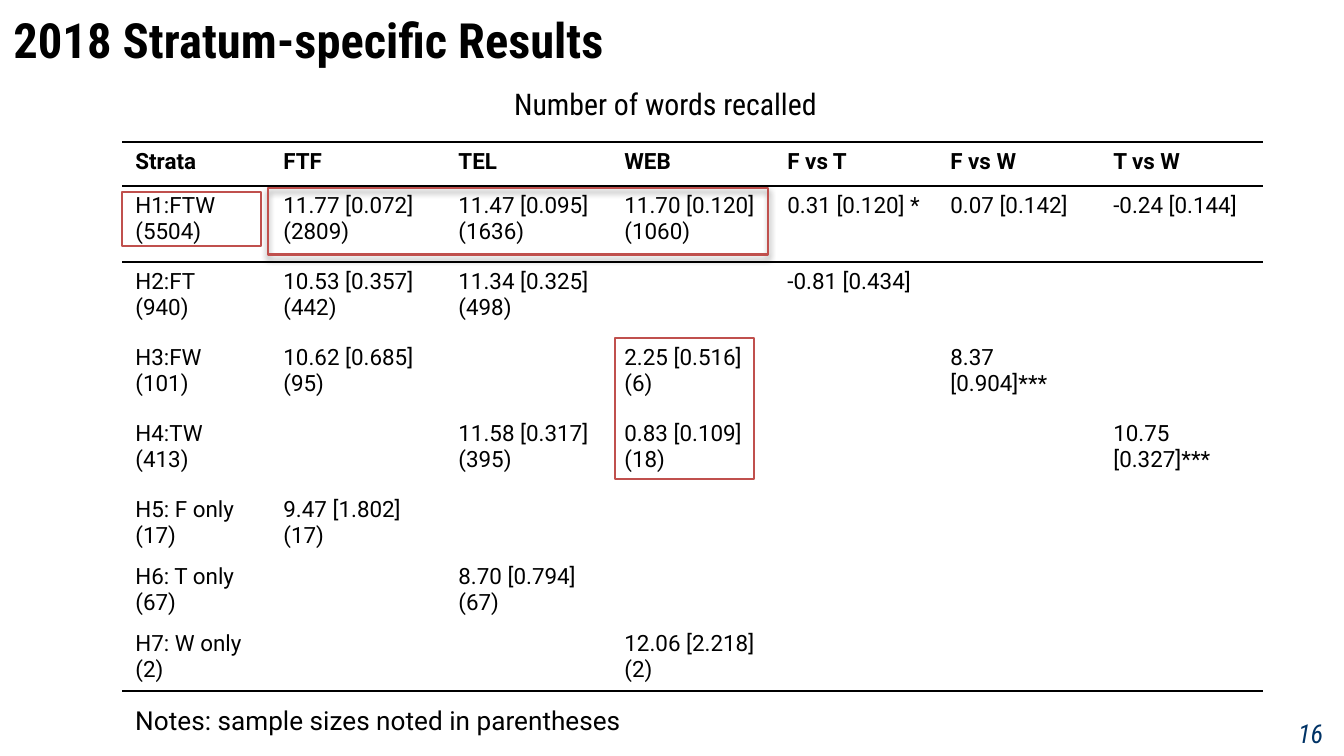
from lxml.etree import SubElement
from pptx import Presentation
from pptx.dml.color import RGBColor
from pptx.enum.shapes import MSO_SHAPE
from pptx.enum.text import MSO_ANCHOR, MSO_AUTO_SIZE, PP_ALIGN
from pptx.oxml.ns import qn
from pptx.util import Emu, Pt

COLORS = {"ink": "000000", "number": "003366", "highlight": "C0504D"}
BODY, CONDENSED = "Roboto", "Roboto Condensed"
NO_STYLE = "{2D5ABB26-0587-4C30-8999-92F81FD0307C}"

TITLE = "2018 Stratum-specific Results"
# text, (left, top, width, height) in px, format
LABELS = [
    ("Number of words recalled", (501, 79, 383, 59), {"size": 16, "font": CONDENSED}),
    ("Notes: sample sizes noted in parentheses", (122, 698, 1158, 46), {"size": 14}),
    ("16", (1285, 711, 69, 46),
     {"size": 14, "font": CONDENSED, "color": "number", "italic": True}),
]

RESULTS = [
    ["Strata", "FTF", "TEL", "WEB", "F vs T", "F vs W", "T vs W"],
    ["H1:FTW\n(5504)", "11.77 [0.072]\n(2809)", "11.47 [0.095]\n(1636)",
     "11.70 [0.120]\n(1060)", "0.31 [0.120] *", "0.07 [0.142]", "-0.24 [0.144]"],
    ["H2:FT\n(940)", "10.53 [0.357]\n(442)", "11.34 [0.325]\n(498)", "",
     "-0.81 [0.434]", "", ""],
    ["H3:FW\n(101)", "10.62 [0.685]\n(95)", "", "2.25 [0.516]\n(6)", "",
     "8.37\n[0.904]***", ""],
    ["H4:TW\n(413)", "", "11.58 [0.317]\n(395)", "0.83 [0.109]\n(18)", "", "",
     "10.75 [0.327]***"],
    ["H5: F only\n(17)", "9.47 [1.802]\n(17)", "", "", "", "", ""],
    ["H6: T only\n(67)", "", "8.70 [0.794]\n(67)", "", "", "", ""],
    ["H7: W only\n(2)", "", "", "12.06 [2.218]\n(2)", "", "", ""],
]
TABLE_LEFT, TABLE_TOP = 122, 142
COLUMN_WIDTHS = [148, 175, 166] + [163] * 4
ROW_HEIGHTS = [44] + [76] * 4 + [67] * 3

# (left, top, width, height) in px, has shadow
HIGHLIGHTS = [
    ((122, 192, 139, 54), False),
    ((268, 188, 500, 67), True),
    ((615, 338, 139, 141), False),
]


def px(length):
    return Emu(round(length * 914400 / 134.4))


def place(box):
    return [px(length) for length in box]


def rgb(name):
    return RGBColor.from_string(COLORS[name])


def write(frame, text, size=12, font=BODY, color="ink", bold=False, italic=False):
    frame.word_wrap = True
    frame.text = text
    for paragraph in frame.paragraphs:
        paragraph.alignment = PP_ALIGN.LEFT
        for run in paragraph.runs:
            run.font.size = Pt(size)
            run.font.name = font
            run.font.bold = bold
            run.font.italic = italic
            run.font.color.rgb = rgb(color)


def rule(cell, side):
    """Draw a cell border; side is T or B."""
    line = SubElement(cell._tc.get_or_add_tcPr(), qn(f"a:ln{side}"), w=str(Pt(1)))
    fill = SubElement(line, qn("a:solidFill"))
    SubElement(fill, qn("a:srgbClr"), val=COLORS["ink"])


def add_results(slide):
    table = slide.shapes.add_table(
        len(RESULTS), len(COLUMN_WIDTHS),
        *place((TABLE_LEFT, TABLE_TOP, sum(COLUMN_WIDTHS), sum(ROW_HEIGHTS))),
    ).table
    table.first_row = table.horz_banding = False
    table._tbl.tblPr.find(qn("a:tableStyleId")).text = NO_STYLE
    for column, width in zip(table.columns, COLUMN_WIDTHS):
        column.width = px(width)
    for row, height in zip(table.rows, ROW_HEIGHTS):
        row.height = px(height)
    ruled_sides = {0: "TB", 1: "T", len(RESULTS) - 1: "B"}
    for r, values in enumerate(RESULTS):
        for c, value in enumerate(values):
            cell = table.cell(r, c)
            write(cell.text_frame, value, bold=r == 0)
            for side in ruled_sides.get(r, ""):
                rule(cell, side)
            cell.fill.background()


def add_highlight(slide, box, shadowed):
    frame = slide.shapes.add_shape(MSO_SHAPE.RECTANGLE, *place(box))
    frame.fill.background()
    frame.line.color.rgb = rgb("highlight")
    frame.line.width = Pt(1.5)
    frame.shadow.inherit = False
    if shadowed:
        effects = frame._element.spPr.find(qn("a:effectLst"))
        shadow = SubElement(effects, qn("a:outerShdw"), blurRad=str(Pt(3.1)),
                            dist=str(Pt(1.8)), dir="5400000", rotWithShape="0")
        shade = SubElement(shadow, qn("a:srgbClr"), val=COLORS["ink"])
        SubElement(shade, qn("a:alpha"), val="35000")


def main():
    deck = Presentation()
    deck.slide_width, deck.slide_height = px(1344), px(756)
    slide = deck.slides.add_slide(deck.slide_layouts[5])

    title = slide.shapes.title
    title.left, title.top, title.width, title.height = place((0, 0, 1344, 78))
    write(title.text_frame, TITLE, size=26, font=CONDENSED, bold=True)
    title.text_frame.auto_size = MSO_AUTO_SIZE.NONE
    title.text_frame.vertical_anchor = MSO_ANCHOR.MIDDLE

    add_results(slide)
    for text, box, style in LABELS:
        write(slide.shapes.add_textbox(*place(box)).text_frame, text, **style)
    for box, shadowed in HIGHLIGHTS:
        add_highlight(slide, box, shadowed)
    deck.save("out.pptx")


if __name__ == "__main__":
    main()
